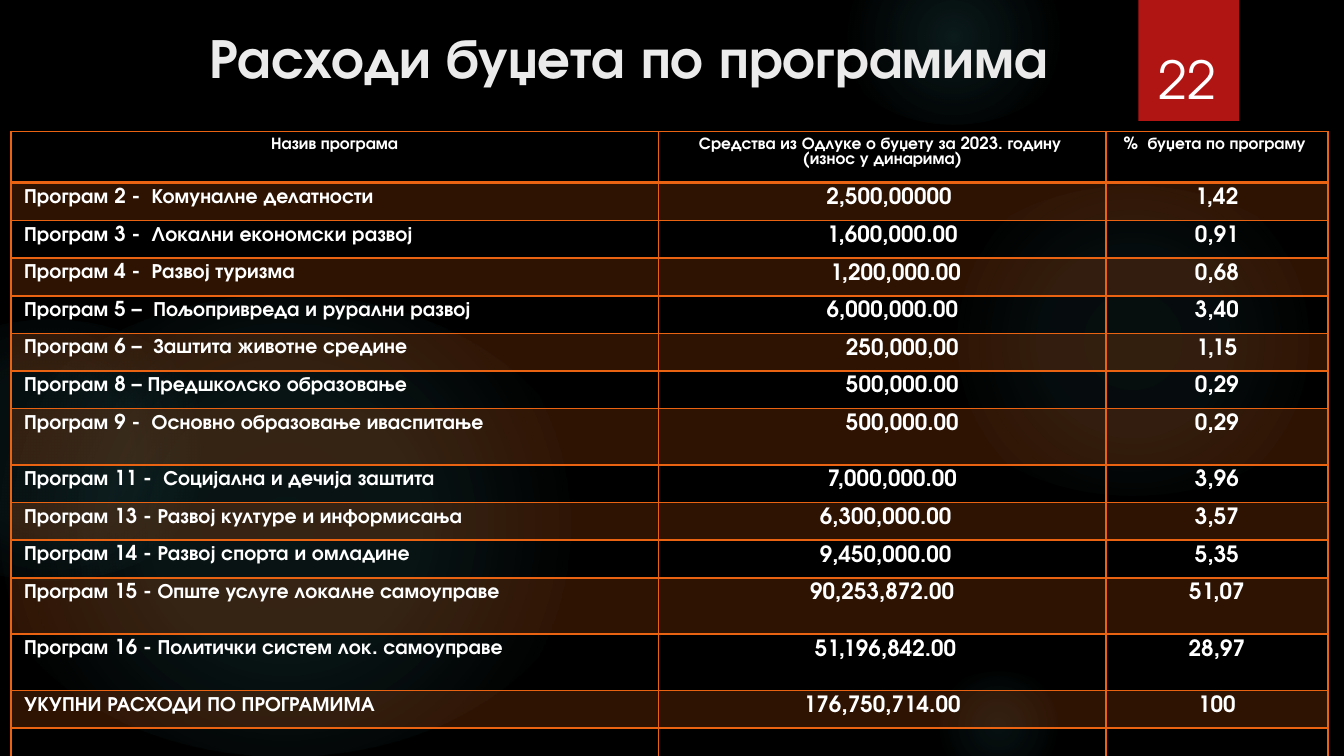
from lxml import etree
from pptx import Presentation
from pptx.dml.color import RGBColor
from pptx.enum import shapes, text
from pptx.oxml import parse_xml
from pptx.oxml.ns import nsdecls, qn
from pptx.util import Inches, Pt

FONT = "TeX Gyre Adventor"
BLACK = RGBColor(0x00, 0x00, 0x00)
WHITE = RGBColor(0xFF, 0xFF, 0xFF)
TITLE_COLOR = RGBColor(0xEB, 0xEB, 0xEB)
RED = RGBColor(0xB0, 0x15, 0x13)
ORANGE = RGBColor(0xEA, 0x63, 0x12)
TEAL = RGBColor(0x50, 0xB9, 0xC1)

GLOWS = [
    ((6.89, 1.38, 3.08, 2.31), ((0, 7), (36, 6), (69, 0))),
    ((6.22, -0.38, 1.75, 1.31), ((0, 14), (36, 7), (73, 0))),
    ((6.89, 5, 1.08, 0.81), ((0, 9), (36, 5), (66, 0))),
    ((-0.17, 2.19, 4.58, 3.44), ((0, 11), (36, 10), (75, 0))),
    ((-0.92, 2.38, 2.58, 1.94), ((0, 8), (36, 8), (72, 0))),
]

HEADERS = (
    "Назив програма",
    "Средства из Одлуке о буџету за 2023. годину  (износ у динарима)",
    "%  буџета по програму ",
)
PROGRAMS = [
    ("Програм 2 -  Комуналне делатности", "2,500,00000", "1,42", 0.27, 2),
    ("Програм 3 -  Локални економски развој", "1,600,000.00", "0,91", 0.28, 3),
    ("Програм 4 -  Развој туризма", "1,200,000.00", "0,68", 0.27, 4),
    ("Програм 5 –  Пољопривреда и рурални развој", "6,000,000.00", "3,40", 0.28, 3),
    ("Програм 6 –  Заштита животне средине", "250,000,00", "1,15", 0.28, 6),
    ("Програм 8 – Предшколско образовање", "500,000.00", "0,29", 0.27, 6),
    ("Програм 9 -  Основно образовање иваспитање", "500,000.00", "0,29", 0.42, 6),
    ("Програм 11 -  Социјална и дечија заштита", "7,000,000.00", "3,96", 0.27, 3),
    ("Програм 13 - Развој културе и информисања", "6,300,000.00", "3,57", 0.27, 1),
    ("Програм 14 - Развој спорта и омладине", "9,450,000.00", "5,35", 0.27, 1),
    ("Програм 15 - Опште услуге локалне самоуправе", "90,253,872.00", "51,07", 0.42, 0),
    ("Програм 16 - Политички систем лок. самоуправе", "51,196,842.00", "28,97", 0.42, 1),
    ("УКУПНИ РАСХОДИ ПО ПРОГРАМИМА", "176,750,714.00", "100", 0.27, 0),
    ("", "", "", 0.4, 0),
]
COLUMN_WIDTHS = (4.82, 3.33, 1.65)
HEADER_HEIGHT = 0.36
INDENT_STEP = 0.05


def style_text(paragraph, size, color=WHITE, bold=False, centered=False):
    paragraph.alignment = text.PP_ALIGN.CENTER if centered else text.PP_ALIGN.LEFT
    for run in paragraph.runs:
        run.font.name = FONT
        run.font.size = Pt(size)
        run.font.bold = bold
        run.font.color.rgb = color


def add_shape(slide, kind, box):
    shape = slide.shapes.add_shape(kind, *map(Inches, box))
    shape.shadow.inherit = False
    shape.line.fill.background()
    return shape


def add_glow(slide, box, stops):
    shape = add_shape(slide, shapes.MSO_SHAPE.OVAL, box)
    stop_xml = "".join(
        f'<a:gs pos="{position * 1000}"><a:srgbClr val="{TEAL}">'
        f'<a:alpha val="{alpha * 1000}"/></a:srgbClr></a:gs>'
        for position, alpha in stops
    )
    gradient = parse_xml(
        f'<a:gradFill {nsdecls("a")}><a:gsLst>{stop_xml}</a:gsLst>'
        '<a:path path="circle"><a:fillToRect l="50000" t="50000" r="50000" b="50000"/>'
        "</a:path></a:gradFill>"
    )
    shape.element.spPr.find(qn("a:prstGeom")).addnext(gradient)


def add_number_tab(slide):
    shape = add_shape(slide, shapes.MSO_SHAPE.RECTANGLE, (8.47, 0, 0.75, 0.9))
    shape.fill.solid()
    shape.fill.fore_color.rgb = RED
    shape.element.spPr.find(qn("a:effectLst")).append(parse_xml(
        f'<a:outerShdw {nsdecls("a")} blurRad="{Pt(3)}" dist="{Pt(2)}" dir="5400000" rotWithShape="0">'
        f'<a:srgbClr val="{BLACK}"><a:alpha val="45000"/></a:srgbClr></a:outerShdw>'
    ))


def add_label(slide, box, wording, anchor, size, **style):
    frame = slide.shapes.add_textbox(*map(Inches, box)).text_frame
    frame.word_wrap = True
    frame.vertical_anchor = anchor
    frame.margin_top = 0
    frame.margin_bottom = Inches(0.05)
    frame.text = wording
    style_text(frame.paragraphs[0], size, **style)


def set_borders(cell, widths):
    properties = cell._tc.get_or_add_tcPr()
    for side, width in zip("LRTB", widths):
        line = etree.SubElement(properties, qn(f"a:ln{side}"), w=str(Pt(width)))
        fill = etree.SubElement(line, qn("a:solidFill"))
        etree.SubElement(fill, qn("a:srgbClr"), val=str(ORANGE))


def fill_cell(cell, banded):
    if not banded:
        cell.fill.background()
        return
    cell.fill.solid()
    cell.fill.fore_color.rgb = ORANGE
    color = cell._tc.tcPr.find(qn("a:solidFill")).find(qn("a:srgbClr"))
    etree.SubElement(color, qn("a:alpha"), val="20000")


def write_cell(cell, wording, size, centered, indent=0):
    cell.margin_left = Inches(0.1 + indent * INDENT_STEP)
    cell.margin_right = Inches(0.1)
    cell.margin_top = cell.margin_bottom = Inches(0.04)
    cell.text = wording
    style_text(cell.text_frame.paragraphs[0], size, bold=True, centered=centered)


def add_budget_table(slide):
    heights = [HEADER_HEIGHT] + [program[3] for program in PROGRAMS]
    table = slide.shapes.add_table(
        len(heights), len(COLUMN_WIDTHS), Inches(0.08), Inches(0.98),
        Inches(sum(COLUMN_WIDTHS)), Inches(sum(heights)),
    ).table
    table.first_row = table.horz_banding = False
    for column, width in zip(table.columns, COLUMN_WIDTHS):
        column.width = Inches(width)
    for row, height in zip(table.rows, heights):
        row.height = Inches(height)

    for column, header in enumerate(HEADERS):
        cell = table.cell(0, column)
        write_cell(cell, header, 9, True)
        set_borders(cell, (1, 1, 1, 2))
        fill_cell(cell, False)

    for row, (name, amount, share, _, indent) in enumerate(PROGRAMS, start=1):
        for column, wording in enumerate((name, amount, share)):
            cell = table.cell(row, column)
            write_cell(cell, wording, 12 if column else 11, column > 0,
                       indent if column == 1 else 0)
            set_borders(cell, (1, 1, 2 if row == 1 else 1, 1))
            fill_cell(cell, row % 2 == 1)


def main():
    presentation = Presentation()
    presentation.slide_width = Inches(10)
    presentation.slide_height = Inches(10 * 9 / 16)
    slide = presentation.slides.add_slide(presentation.slide_layouts[6])
    slide.background.fill.solid()
    slide.background.fill.fore_color.rgb = BLACK

    for box, stops in GLOWS:
        add_glow(slide, box, stops)
    add_number_tab(slide)
    add_label(slide, (1.46, 0.12, 8.52, 0.64), "Расходи буџета по програмима",
              text.MSO_ANCHOR.MIDDLE, 30, color=TITLE_COLOR, bold=True)
    add_label(slide, (8.49, 0.24, 0.69, 0.63), "22",
              text.MSO_ANCHOR.BOTTOM, 28, centered=True)
    add_budget_table(slide)
    presentation.save("out.pptx")


if __name__ == "__main__":
    main()
